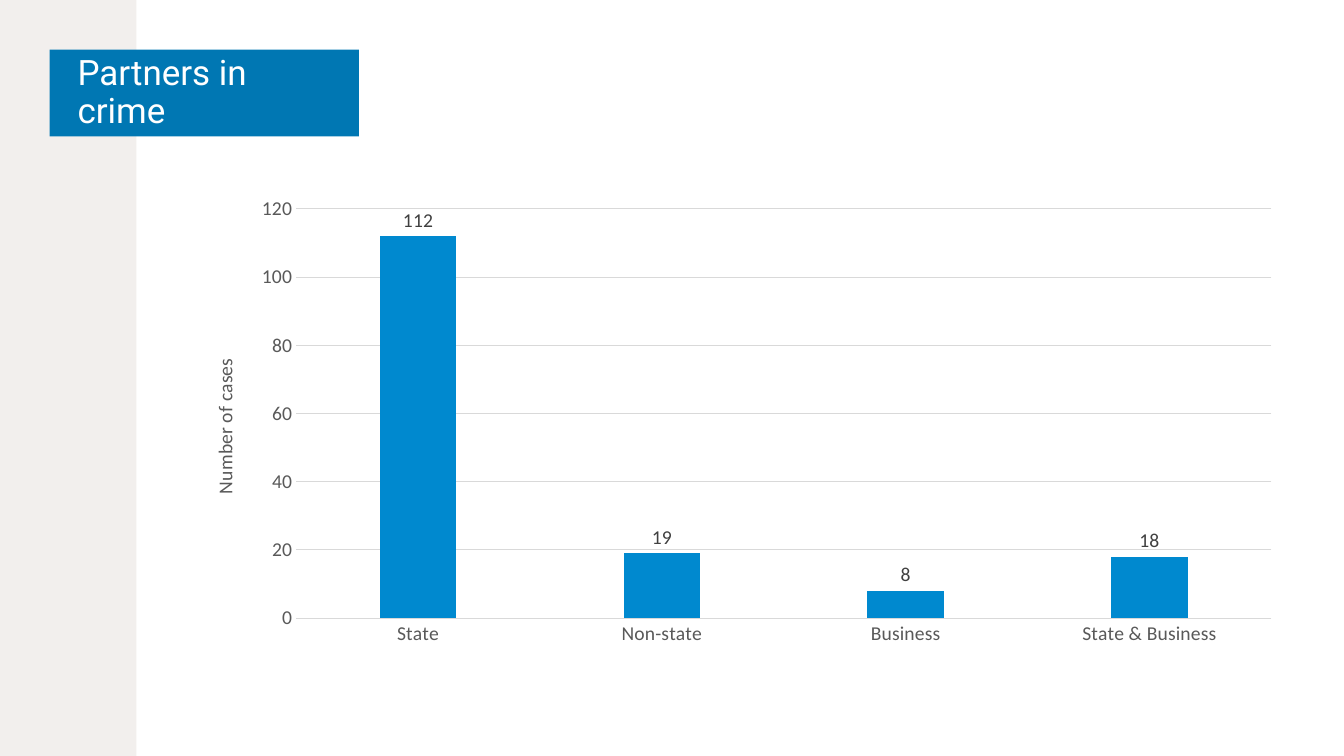
"""Build the slide "Partners in crime" with its column chart of cases."""
from pptx import Presentation
from pptx import util as u
from pptx.chart.data import CategoryChartData
from pptx.dml.color import RGBColor
from pptx.enum import chart as charts, shapes, text
from pptx.oxml import parse_xml
from pptx.oxml.ns import nsdecls, qn

CASES = {"State": 112, "Non-state": 19, "Business": 8, "State & Business": 18}


def colour(value):
    return RGBColor.from_string(value)


def add_box(page, left, top, width, height, fill):
    box = page.shapes.add_shape(
        shapes.MSO_SHAPE.RECTANGLE, u.Pt(left), u.Pt(top), u.Pt(width), u.Pt(height))
    box.shadow.inherit = False
    box.fill.solid()
    box.fill.fore_color.rgb = colour(fill)
    box.line.fill.background()
    return box


def style_font(font, size, ink, name="Calibri"):
    font.size, font.name, font.bold = u.Pt(size), name, False
    font.color.rgb = colour(ink)


def write(frame, words, size, ink, name="Calibri", align=None, spacing=None):
    para = frame.paragraphs[0]
    para.alignment, para.line_spacing = align, spacing
    span = para.add_run()
    span.text = words
    style_font(span.font, size, ink, name)


def add_heading(page, words):
    box = add_box(page, 35.5, 35.5, 221, 62, "0077B3")
    frame = box.text_frame
    frame.word_wrap = True
    frame.vertical_anchor = text.MSO_ANCHOR.MIDDLE
    frame.margin_left = u.Pt(20)
    frame.margin_top = frame.margin_right = frame.margin_bottom = u.Pt(17)
    write(frame, words, 25, "FFFFFF", "Roboto", text.PP_ALIGN.LEFT, 0.9)


def set_layout(parent, index, target="", **fractions):
    for old in parent.findall(qn("c:layout")):
        parent.remove(old)
    inner = f'<c:layoutTarget val="{target}"/>' if target else ""
    modes = "".join(f'<c:{key}Mode val="edge"/>' for key in "xy")
    sizes = "".join(f'<c:{key} val="{value}"/>' for key, value in fractions.items())
    parent.insert(index, parse_xml(
        f'<c:layout {nsdecls("c")}><c:manualLayout>{inner}{modes}{sizes}'
        "</c:manualLayout></c:layout>"))


def style_axis(axis):
    axis.major_tick_mark = axis.minor_tick_mark = charts.XL_TICK_MARK.NONE
    style_font(axis.tick_labels.font, 14, "595959")


def style_line(line):
    line.color.rgb = colour("D9D9D9")
    line.width = u.Pt(0.75)


def add_columns(page, values, axis_title):
    data = CategoryChartData()
    data.categories = list(values)
    data.add_series("Series 1", list(values.values()))
    chart = page.shapes.add_chart(
        charts.XL_CHART_TYPE.COLUMN_CLUSTERED,
        u.Pt(132.5), u.Pt(132.5), u.Pt(792), u.Pt(336), data).chart
    chart.has_legend = chart.has_title = False
    style_font(chart.font, 10, "000000")

    plot = chart.plots[0]
    plot.gap_width, plot.overlap, plot.vary_by_categories = 219, -27, False
    series = plot.series[0]
    series.format.fill.solid()
    series.format.fill.fore_color.rgb = colour("0089CF")
    labels = series.data_labels
    labels.show_value = True
    labels.position = charts.XL_LABEL_POSITION.OUTSIDE_END
    style_font(labels.font, 14, "404040")

    style_axis(chart.category_axis)
    style_line(chart.category_axis.format.line)
    axis = chart.value_axis
    style_axis(axis)
    axis.minimum_scale, axis.maximum_scale, axis.major_unit = 0, 120, 20
    axis.format.line.fill.background()
    style_line(axis.major_gridlines.format.line)
    write(axis.axis_title.text_frame, axis_title, 14, "595959")
    axis.axis_title.text_frame._txBody.bodyPr.set("rot", "-5400000")
    axis.axis_title.text_frame._txBody.bodyPr.set("vert", "horz")
    set_layout(axis.axis_title._element, 1, x=0.02, y=0.36)
    set_layout(chart._chartSpace.chart.plotArea, 0, "inner", x=0.1, y=0.05, w=0.88, h=0.87)


def main():
    deck = Presentation()
    deck.slide_width, deck.slide_height = u.Pt(960.5), u.Pt(540)
    page = deck.slides.add_slide(deck.slide_layouts[6])
    add_box(page, 0, 0, 97.5, 540, "F2EFED")
    add_heading(page, "Partners in crime")
    add_columns(page, CASES, "Number of cases")
    deck.save("out.pptx")


if __name__ == "__main__":
    main()
